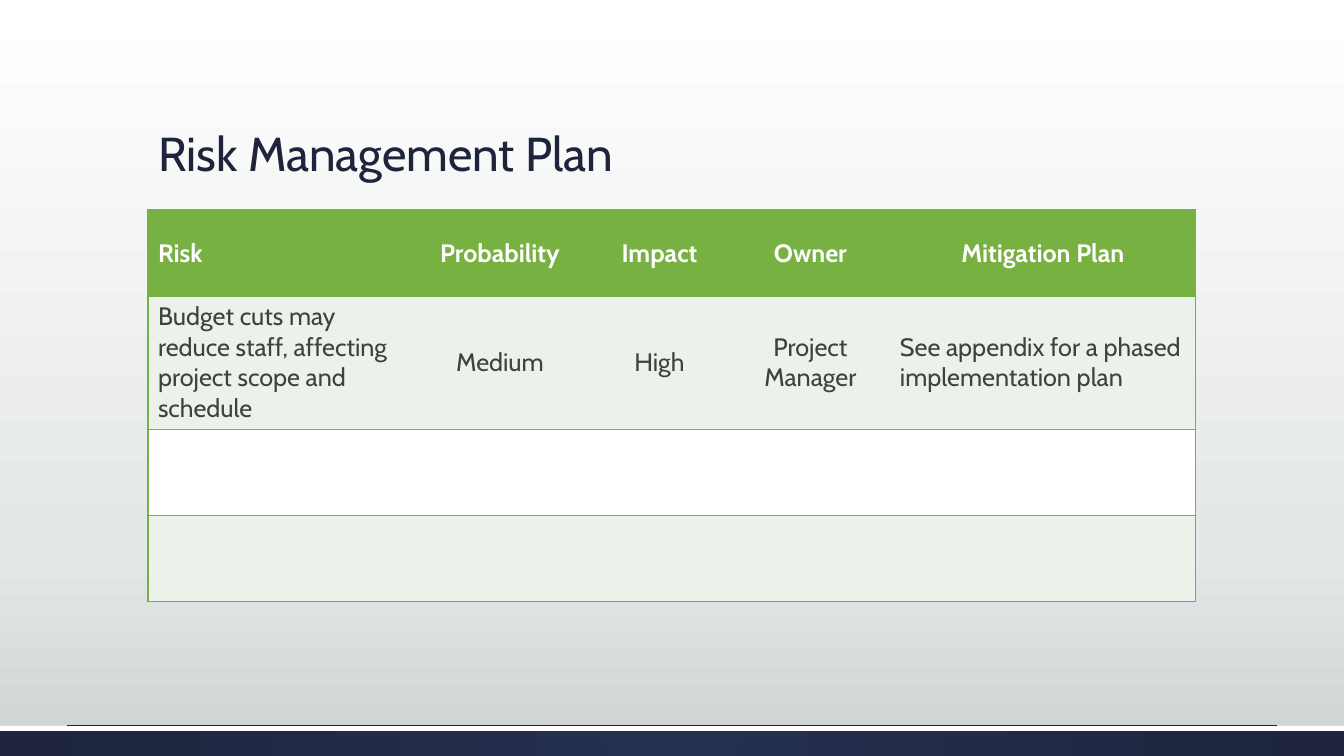
from pptx import Presentation
from pptx.dml.color import RGBColor
from pptx.enum.shapes import MSO_CONNECTOR, MSO_SHAPE
from pptx.enum.text import MSO_ANCHOR, MSO_AUTO_SIZE, PP_ALIGN
from pptx.oxml.ns import qn
from pptx.util import Pt
from lxml import etree

RECT, STRAIGHT = MSO_SHAPE.RECTANGLE, MSO_CONNECTOR.STRAIGHT
LEFT, CENTER = PP_ALIGN.LEFT, PP_ALIGN.CENTER
MIDDLE, BOTTOM = MSO_ANCHOR.MIDDLE, MSO_ANCHOR.BOTTOM
NO_STYLE = "{2D5ABB26-0587-4C30-8999-92F81FD0307C}"
PX = 914400 / 100.8

THEME = {
    "font": "Cabin", "title_size": 34, "table_size": 18,
    "navy": "1D243C", "navy_light": "263050", "white": "FFFFFF",
    "green": "77B142", "band": "ECF2E9", "text": "404040",
    "sky": [(0, "FFFFFF"), (72, "E5E8E8"), (100, "CDD2D2")],
}


def px(n):
    return round(n * PX)


def set_gradient(fill, root, stops, radial=False):
    fill.gradient()
    grad = next(root.iter(qn("a:gradFill")))
    for child in list(grad):
        grad.remove(child)
    gs_list = etree.SubElement(grad, qn("a:gsLst"))
    for pos, color in stops:
        gs = etree.SubElement(gs_list, qn("a:gs"), pos=str(pos * 1000))
        etree.SubElement(gs, qn("a:srgbClr"), val=color)
    if radial:
        circle = etree.SubElement(grad, qn("a:path"), path="circle")
        etree.SubElement(circle, qn("a:fillToRect"), dict.fromkeys("ltrb", "50000"))
    else:
        etree.SubElement(grad, qn("a:lin"), ang="5400000", scaled="0")


prs = Presentation()
prs.slide_width, prs.slide_height = px(1344), px(756)
s = prs.slides.add_slide(prs.slide_layouts[5])

# Background
set_gradient(s.background.fill, s._element, THEME["sky"])

# Footer band with white stripe and hairline
for height in (30, 5):
    sp = s.shapes.add_shape(RECT, 0, px(726), px(1344), px(height))
    sp.shadow.inherit = False
    sp.line.fill.background()
    if height == 30:
        stops = [(0, THEME["navy_light"]), (100, THEME["navy"])]
        set_gradient(sp.fill, sp._element, stops, radial=True)
    else:
        sp.fill.solid()
        sp.fill.fore_color.rgb = RGBColor.from_string(THEME["white"])
hairline = s.shapes.add_connector(STRAIGHT, px(67), px(725), px(1277), px(725))
hairline.line.color.rgb = RGBColor.from_string(THEME["navy"])
hairline.line.width = Pt(0.5)
etree.SubElement(hairline._element.spPr, qn("a:effectLst"))

# Title
title = s.shapes.title
title.left, title.top, title.width, title.height = px(148), px(51), px(1048), px(136)
tf = title.text_frame
tf.text = "Risk Management Plan"
tf.word_wrap = True
tf.auto_size = MSO_AUTO_SIZE.NONE
tf.vertical_anchor = BOTTOM
p = tf.paragraphs[0]
p.alignment = LEFT
p.line_spacing = 0.9
r = p.runs[0]
r.font.name = THEME["font"]
r.font.size = Pt(THEME["title_size"])
r.font.color.rgb = RGBColor.from_string(THEME["navy"])

# Risk table
COLUMNS = [264, 176, 143, 159, 306]
ROWS = [86, 133, 86, 86]
FILLS = [THEME["green"], THEME["band"], THEME["white"], THEME["band"]]
RISKS = [
    ["Risk", "Probability", "Impact", "Owner", "Mitigation Plan"],
    ["Budget cuts may reduce staff, affecting project scope and schedule",
     "Medium", "High", "Project Manager",
     "See appendix for a phased implementation plan"],
    [""] * 5,
    [""] * 5,
]
frame = s.shapes.add_table(len(ROWS), len(COLUMNS), px(148), px(210),
                           px(sum(COLUMNS)), px(sum(ROWS)))
table = frame.table
table.horz_banding = False
table._tbl.tblPr.find(qn("a:tableStyleId")).text = NO_STYLE
for column, width in zip(table.columns, COLUMNS):
    column.width = px(width)
last = len(COLUMNS) - 1

for i, (row, height) in enumerate(zip(table.rows, ROWS)):
    row.height = px(height)
    for j, cell in enumerate(row.cells):
        # Borders: rules between rows and around the outside
        tcPr = cell._tc.get_or_add_tcPr()
        for side, shown in (("L", j == 0), ("R", j == last), ("T", True), ("B", True)):
            if shown:
                ln = etree.SubElement(tcPr, qn("a:ln" + side), w=str(Pt(1)))
                solid = etree.SubElement(ln, qn("a:solidFill"))
                etree.SubElement(solid, qn("a:srgbClr"), val=THEME["green"])
        cell.fill.solid()
        cell.fill.fore_color.rgb = RGBColor.from_string(FILLS[i])

        # Text: first column and long plan text stay left
        cell.vertical_anchor = MIDDLE
        cell.text = RISKS[i][j]
        p = cell.text_frame.paragraphs[0]
        p.alignment = LEFT if j == 0 or (j == last and i > 0) else CENTER
        for r in p.runs:
            r.font.name = THEME["font"]
            r.font.size = Pt(THEME["table_size"])
            r.font.bold = i == 0
            r.font.color.rgb = RGBColor.from_string(THEME["text" if i else "white"])

prs.save("out.pptx")
